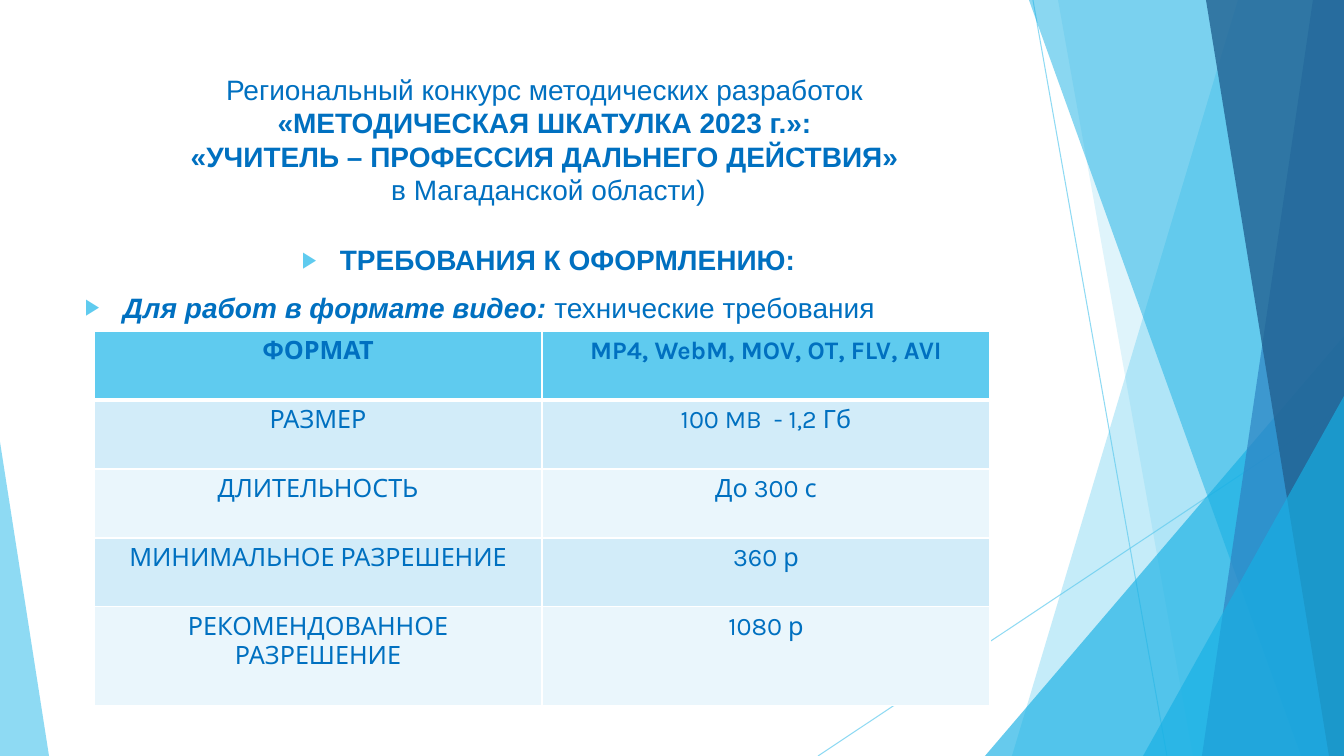
from lxml import etree
from pptx import Presentation
from pptx import util as u
from pptx.dml.color import RGBColor
from pptx.enum import shapes, text
from pptx.oxml import ns

W, H = 1344, 756
SCALE = 914400 / 100.8
COLORS = {
    "sky": "5FCBEF", "cyan": "17B0E4", "blue": "2E83C3", "navy": "226292",
    "text": "0070C0", "white": "FFFFFF", "band": "D2ECF9", "pale": "EAF6FC",
}
ROWS = [
    ("ФОРМАТ", "MP4, WebM, MOV, OT, FLV, AVI"),
    ("РАЗМЕР", "100 MB  - 1,2 Гб"),
    ("ДЛИТЕЛЬНОСТЬ", "До 300 с"),
    ("МИНИМАЛЬНОЕ РАЗРЕШЕНИЕ", "360 р"),
    ("РЕКОМЕНДОВАННОЕ РАЗРЕШЕНИЕ", "1080 р"),
]
ROW_HEIGHTS = [69, 69, 69, 69, 99]


def px(n):
    return u.Emu(round(n * SCALE))


def rgb(name):
    return RGBColor.from_string(COLORS[name])


def sub(parent, tag, **attrs):
    return etree.SubElement(parent, ns.qn(tag), attrs)


def set_alpha(sp, percent):
    clr = next(sp._element.spPr.iter(ns.qn("a:srgbClr")))
    sub(clr, "a:alpha", val=str(percent * 1000))


def paint(sp, color, alpha):
    sp.shadow.inherit = False
    sp.fill.solid()
    sp.fill.fore_color.rgb = rgb(color)
    sp.line.fill.background()
    set_alpha(sp, alpha)


def add_ray(s, x1, y1, x2, y2):
    c = s.shapes.add_connector(shapes.MSO_CONNECTOR.STRAIGHT, px(x1), px(y1), px(x2), px(y2))
    c.line.color.rgb = rgb("sky")
    c.line.width = u.Pt(0.75)
    set_alpha(c, 70)
    sub(c._element.spPr, "a:effectLst")


def add_edge_band(s, top, bottom, color, alpha):
    fb = s.shapes.build_freeform(top, 0, scale=SCALE)
    fb.add_line_segments([(W, 0), (W, H), (bottom, H)], close=True)
    paint(fb.convert_to_shape(), color, alpha)


def add_corner(s, x, y, w, apex, color, alpha):
    sp = s.shapes.add_shape(shapes.MSO_SHAPE.ISOSCELES_TRIANGLE, px(x), px(y), px(w), px(H - y))
    sp.adjustments[0] = apex
    paint(sp, color, alpha)


def add_run(p, words, size=20, font="Arial", bold=False, italic=False):
    r = p.add_run()
    r.text = words
    f = r.font
    f.name, f.size, f.bold, f.italic = font, u.Pt(size), bold, italic
    f.color.rgb = rgb("text")


def setup_frame(tf):
    tf.word_wrap = True
    tf.auto_size = text.MSO_AUTO_SIZE.NONE
    tf.vertical_anchor = text.MSO_ANCHOR.TOP


def fill_title(s):
    sp = s.shapes.title
    sp.left, sp.top, sp.width, sp.height = px(75), px(67), px(947), px(145)
    setup_frame(sp.text_frame)
    p = sp.text_frame.paragraphs[0]
    p.alignment = text.PP_ALIGN.CENTER
    lines = [
        ("Региональный конкурс методических разработок ", False),
        ("«МЕТОДИЧЕСКАЯ ШКАТУЛКА 2023 г.»: ", True),
        ("«УЧИТЕЛЬ – ПРОФЕССИЯ ДАЛЬНЕГО ДЕЙСТВИЯ» ", True),
        ("в Магаданской области)", False),
    ]
    for i, (words, bold) in enumerate(lines):
        if i:
            p.add_line_break()
        add_run(p, words, bold=bold)


def format_bullet(p, align):
    p.alignment = align
    p.space_before = u.Pt(10)
    pPr = p._p.get_or_add_pPr()
    pPr.set("marL", str(px(38)))
    pPr.set("indent", str(-px(38)))
    sub(sub(pPr, "a:buClr"), "a:srgbClr", val=COLORS["sky"])
    sub(pPr, "a:buSzPct", val="80000")
    sub(pPr, "a:buFont", typeface="Arial")
    sub(pPr, "a:buChar", char="▶")


def add_requirements(s):
    tf = s.shapes.add_textbox(px(75), px(238), px(947), px(92)).text_frame
    setup_frame(tf)
    p = tf.paragraphs[0]
    format_bullet(p, text.PP_ALIGN.CENTER)
    add_run(p, "ТРЕБОВАНИЯ К ОФОРМЛЕНИЮ:", bold=True)
    p = tf.add_paragraph()
    format_bullet(p, text.PP_ALIGN.JUSTIFY)
    add_run(p, "Для работ в формате видео: ", bold=True, italic=True)
    add_run(p, "технические требования")


def add_borders(cell, header):
    tcPr = cell._tc.get_or_add_tcPr()
    for side in "LRTB":
        width = 3 if header and side == "B" else 1
        ln = sub(tcPr, "a:ln" + side, w=str(u.Pt(width)))
        sub(sub(ln, "a:solidFill"), "a:srgbClr", val=COLORS["white"])


def add_format_table(s):
    gf = s.shapes.add_table(len(ROWS), 2, px(94), px(331), px(896), px(sum(ROW_HEIGHTS)))
    tbl = gf.table
    for i, row in enumerate(ROWS):
        tbl.rows[i].height = px(ROW_HEIGHTS[i])
        color = "sky" if i == 0 else ("band" if i % 2 else "pale")
        for j, words in enumerate(row):
            cell = tbl.cell(i, j)
            add_borders(cell, i == 0)
            cell.fill.solid()
            cell.fill.fore_color.rgb = rgb(color)
            p = cell.text_frame.paragraphs[0]
            p.alignment = text.PP_ALIGN.CENTER
            add_run(p, words, size=18, font="Karla", bold=i == 0)


def add_backdrop(s):
    add_ray(s, 1033, 0, 1167, H)
    add_ray(s, W, 406, 818, H)
    add_edge_band(s, 1238, 1012, "sky", 36)
    add_edge_band(s, 1058, 1193, "sky", 20)
    add_corner(s, 985, 336, 359, 1, "cyan", 66)
    add_edge_band(s, 1029, 1301, "cyan", 50)
    add_edge_band(s, 1313, 1202, "blue", 70)
    add_edge_band(s, 1206, 1329, "navy", 80)
    add_corner(s, 1143, 396, 201, 1, "cyan", 66)
    add_corner(s, 0, 442, 49, 0, "sky", 70)


def main():
    prs = Presentation()
    prs.slide_width, prs.slide_height = px(W), px(H)
    s = prs.slides.add_slide(prs.slide_layouts[5])
    add_backdrop(s)
    fill_title(s)
    add_requirements(s)
    add_format_table(s)
    prs.save("out.pptx")


if __name__ == "__main__":
    main()
